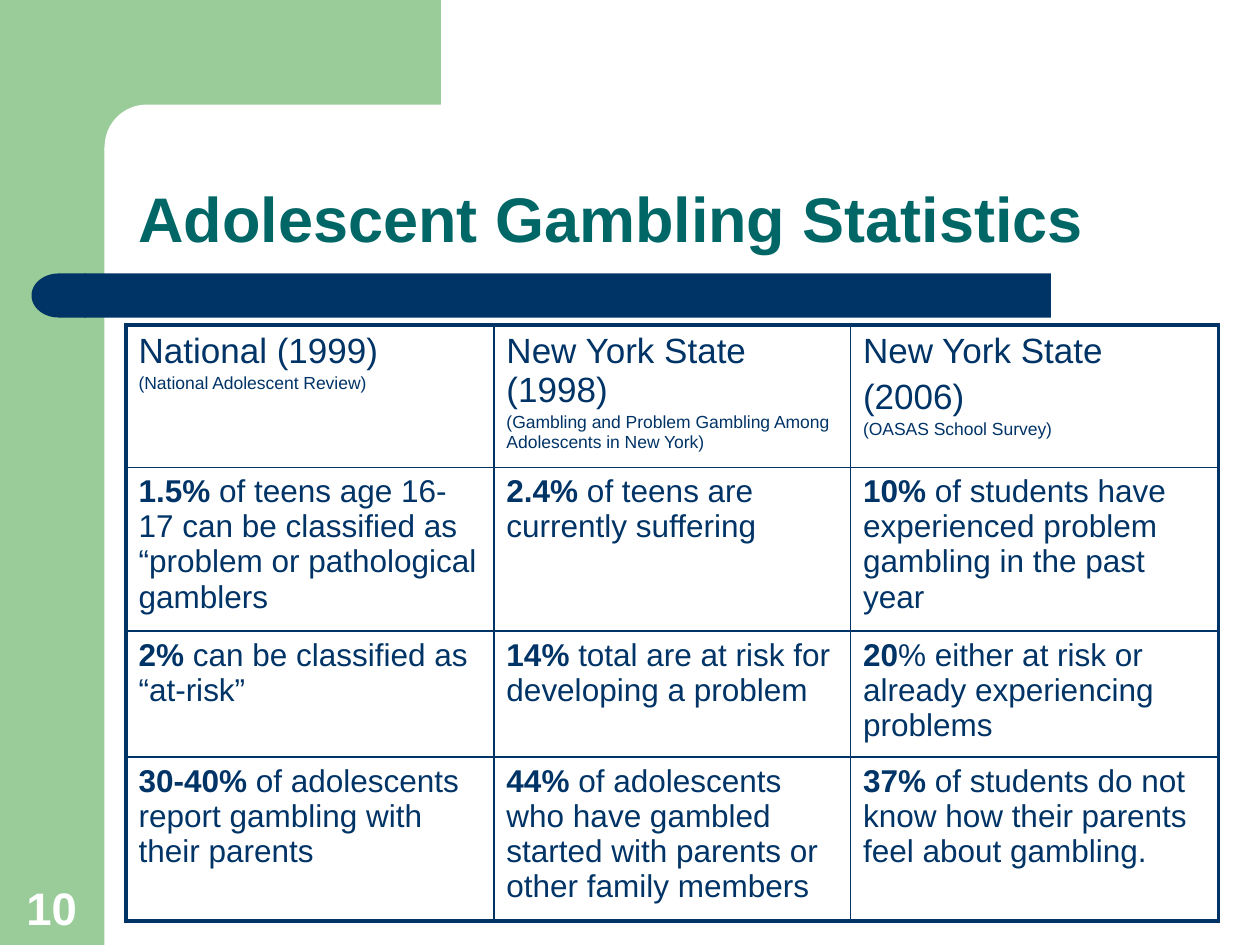
from typing import Any, NamedTuple

from lxml import etree
from pptx import Presentation, util as u
from pptx.dml.color import RGBColor
from pptx.enum import shapes, text
from pptx.oxml import ns

GREEN = RGBColor(0x99, 0xCC, 0x99)
NAVY = RGBColor(0x00, 0x33, 0x66)
TEAL = RGBColor(0x00, 0x66, 0x66)
WHITE = RGBColor(0xFF, 0xFF, 0xFF)
THIN, THICK = 1, 2.25
COLUMN_WIDTHS = (2.92, 2.83, 2.92)
ROW_HEIGHTS = (1.06, 1.22, 0.94, 1.22)


class Panel(NamedTuple):
    kind: shapes.MSO_SHAPE
    box: tuple[float, float, float, float]
    color: RGBColor
    corner: float | None = None
    rotation: int = 0


class Label(NamedTuple):
    wording: str
    box: tuple[float, float, float, float]
    size: int
    color: RGBColor
    layout: dict[str, Any]


class Piece(NamedTuple):
    wording: str
    size: int
    bold: bool = False


Paragraphs = list[list[Piece]]

PANELS = [
    Panel(shapes.MSO_SHAPE.RECTANGLE, (0, 0, 0.83, 7.5), GREEN),
    Panel(shapes.MSO_SHAPE.RECTANGLE, (0.75, 0, 2.75, 1.17), GREEN),
    Panel(shapes.MSO_SHAPE.ROUNDED_RECTANGLE, (0.83, 0.83, 5.58, 0.67), WHITE, 0.5),
    Panel(shapes.MSO_SHAPE.ROUNDED_RECTANGLE, (0.67, 2.17, 7.67, 0.35), NAVY, 0),
    Panel(shapes.MSO_SHAPE.FLOWCHART_DELAY, (0.25, 2.17, 0.43, 0.35), NAVY, rotation=180),
]

LABELS = [
    Label("Adolescent Gambling Statistics", (1, 0.83, 8.75, 1.25), 36, TEAL, {"line_spacing": 0.9}),
    Label("10", (0.09, 6.94, 0.64, 0.53), 26, WHITE, {"alignment": text.PP_ALIGN.CENTER}),
]

HEADINGS = [
    (["National (1999)"], "(National Adolescent Review)"),
    (["New York State (1998)"], "(Gambling and Problem Gambling Among Adolescents in New York)"),
    (["New York State", "(2006)"], "(OASAS School Survey)"),
]

FINDINGS = [
    [
        ("1.5%", " of teens age 16-17 can be classified as “problem or pathological gamblers"),
        ("2.4%", " of teens are currently suffering"),
        ("10%", " of students have experienced problem gambling in the past year"),
    ],
    [
        ("2%", " can be classified as “at-risk”"),
        ("14%", " total are at risk for developing a problem"),
        ("20", "% either at risk or already experiencing problems"),
    ],
    [
        ("30-40%", " of adolescents report gambling with their parents"),
        ("44%", " of adolescents who have gambled started with parents or other family members"),
        ("37%", " of students do not know how their parents feel about gambling."),
    ],
]


def set_attributes(target: Any, values: dict[str, Any]) -> None:
    for name, value in values.items():
        setattr(target, name, value)


def add_run(paragraph: Any, piece: Piece, color: RGBColor) -> None:
    run = paragraph.add_run()
    run.text = piece.wording
    set_attributes(run.font, {"name": "Arial", "size": u.Pt(piece.size), "bold": piece.bold})
    run.font.color.rgb = color


def draw_panel(slide: Any, panel: Panel) -> None:
    shape = slide.shapes.add_shape(panel.kind, *map(u.Inches, panel.box))
    shape.shadow.inherit = False
    shape.fill.solid()
    shape.fill.fore_color.rgb = panel.color
    shape.line.fill.background()
    shape.rotation = panel.rotation
    if panel.corner is not None:
        shape.adjustments[0] = panel.corner


def draw_label(slide: Any, label: Label) -> None:
    frame = slide.shapes.add_textbox(*map(u.Inches, label.box)).text_frame
    set_attributes(frame, {"word_wrap": True, "vertical_anchor": text.MSO_ANCHOR.BOTTOM})
    paragraph = frame.paragraphs[0]
    set_attributes(paragraph, label.layout)
    add_run(paragraph, Piece(label.wording, label.size, True), label.color)


def draw_borders(cell: Any, widths: dict[str, float]) -> None:
    properties = cell._tc.get_or_add_tcPr()
    for side, width in widths.items():
        line = etree.SubElement(properties, ns.qn(f"a:ln{side}"), w=str(u.Pt(width)))
        fill = etree.SubElement(line, ns.qn("a:solidFill"))
        etree.SubElement(fill, ns.qn("a:srgbClr"), val=str(NAVY))


def fill_cell(cell: Any, paragraphs: Paragraphs) -> None:
    frame = cell.text_frame
    for index, pieces in enumerate(paragraphs):
        paragraph = frame.add_paragraph() if index else frame.paragraphs[0]
        paragraph.space_before = u.Pt(0.2 * pieces[0].size)
        for piece in pieces:
            add_run(paragraph, piece, NAVY)


def build_rows() -> list[list[Paragraphs]]:
    header = [
        [[Piece(line, 20)] for line in lines] + [[Piece(study, 10)]]
        for lines, study in HEADINGS
    ]
    body = [
        [[[Piece(figure, 18, True), Piece(finding, 18)]] for figure, finding in row]
        for row in FINDINGS
    ]
    return [header, *body]


def draw_table(slide: Any, rows: list[list[Paragraphs]]) -> None:
    last_row, last_column = len(rows) - 1, len(COLUMN_WIDTHS) - 1
    box = (1, 2.58, sum(COLUMN_WIDTHS), sum(ROW_HEIGHTS))
    table = slide.shapes.add_table(len(rows), len(COLUMN_WIDTHS), *map(u.Inches, box)).table
    set_attributes(table, {"first_row": False, "horz_banding": False})
    for column, width in zip(table.columns, COLUMN_WIDTHS):
        column.width = u.Inches(width)
    for row, height in zip(table.rows, ROW_HEIGHTS):
        row.height = u.Inches(height)
    for i, row in enumerate(rows):
        for j, paragraphs in enumerate(row):
            cell = table.cell(i, j)
            outer = {"L": j == 0, "R": j == last_column, "T": i == 0, "B": i == last_row}
            draw_borders(cell, {side: THICK if edge else THIN for side, edge in outer.items()})
            cell.fill.background()
            fill_cell(cell, paragraphs)


def main() -> None:
    """Build the adolescent gambling statistics slide."""
    presentation = Presentation()
    set_attributes(presentation, {"slide_width": u.Inches(10), "slide_height": u.Inches(7.5)})
    slide = presentation.slides.add_slide(presentation.slide_layouts[6])
    for panel in PANELS:
        draw_panel(slide, panel)
    for label in LABELS:
        draw_label(slide, label)
    draw_table(slide, build_rows())
    presentation.save("out.pptx")


if __name__ == "__main__":
    main()
